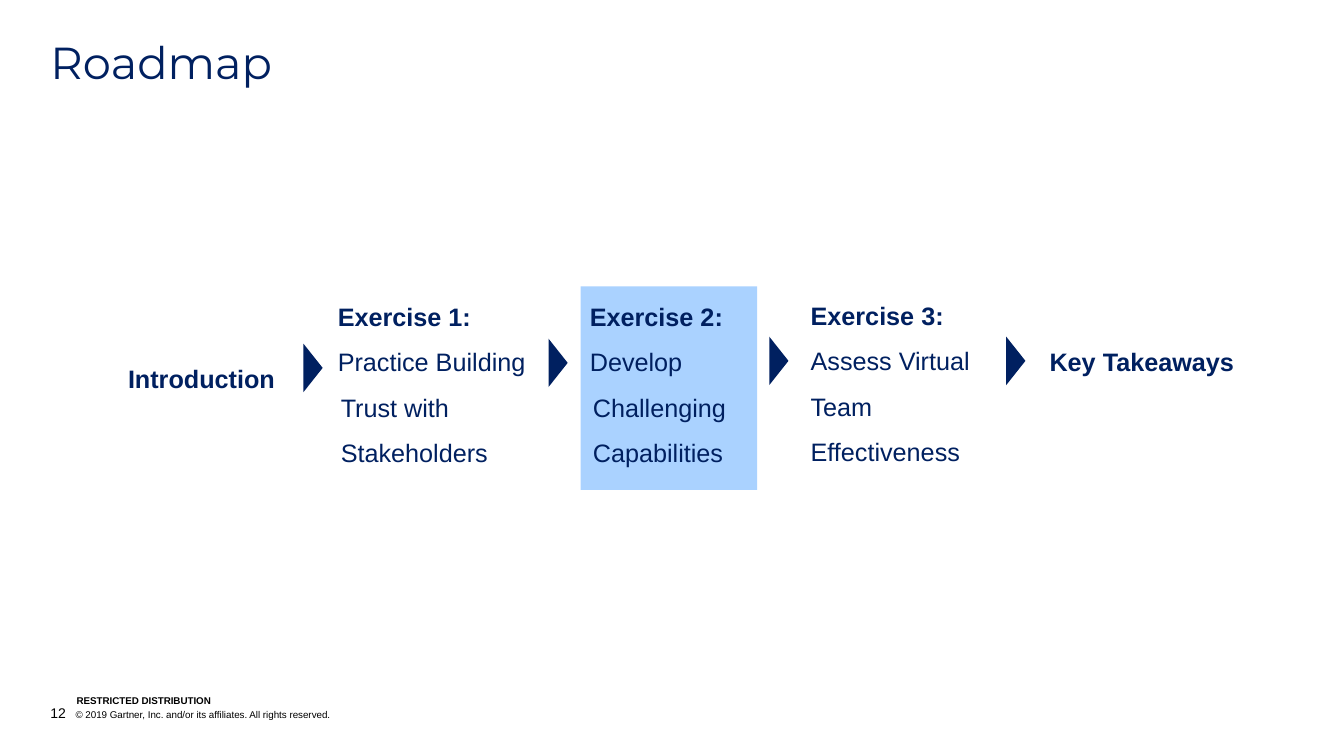
from lxml.etree import SubElement
from pptx import Presentation
from pptx.dml.color import RGBColor
from pptx.enum.shapes import MSO_SHAPE
from pptx.enum.text import MSO_ANCHOR, MSO_AUTO_SIZE, PP_ALIGN
from pptx.oxml.ns import qn
from pptx.util import Inches, Pt

COLORS = {"navy": "002060", "highlight": "AAD2FF", "black": "000000"}
TITLE = "Roadmap"
# label, (left, top, width, height)
ENDS = [
    ("Introduction", (1.27, 3.6, 1.6, 0.3)),
    ("Key Takeaways", (10.41, 3.44, 2, 0.3)),
]
# heading, description, (left, top, width, height), hanging indent
EXERCISES = [
    ("Exercise 1:", "Practice Building Trust with Stakeholders", (3.35, 2.84, 1.95, 1.19), 0.03),
    ("Exercise 2:", "Develop Challenging Capabilities", (5.85, 2.84, 1.72, 1.85), 0.03),
    ("Exercise 3:", "Assess Virtual Team Effectiveness", (8.04, 2.83, 1.84, 2.41), 0),
]
CURRENT_STEP = (5.76, 2.84, 1.75, 2.02)
ARROWS = [(3.01, 3.41), (5.44, 3.36), (7.63, 3.34), (9.98, 3.34)]
ARROW_WIDTH, ARROW_HEIGHT = 0.19, 0.48
RESTRICTION = "RESTRICTED DISTRIBUTION"
PAGE = "12"
COPYRIGHT = "© 2019 Gartner, Inc. and/or its affiliates. All rights reserved."
FOOTER_TAB = 0.25


def color(name):
    return RGBColor.from_string(COLORS[name])


def fill_plain(shape, name):
    shape.fill.solid()
    shape.fill.fore_color.rgb = color(name)
    shape.line.fill.background()
    shape.shadow.inherit = False


def clear_margins(frame):
    frame.margin_left = frame.margin_right = frame.margin_top = frame.margin_bottom = 0


def add_text(slide, box, anchor=MSO_ANCHOR.TOP):
    frame = slide.shapes.add_textbox(*map(Inches, box)).text_frame
    clear_margins(frame)
    frame.word_wrap = True
    frame.vertical_anchor = anchor
    return frame


def hang(paragraph, indent):
    properties = paragraph._p.get_or_add_pPr()
    properties.set("marL", str(Inches(indent)))
    properties.set("indent", str(-Inches(indent)))
    return properties


def style(paragraph, size, name="navy", bold=False, font="Arial"):
    paragraph.font.name = font
    paragraph.font.size = Pt(size)
    paragraph.font.bold = bold
    paragraph.font.color.rgb = color(name)


def add_title(slide):
    title = slide.shapes.title
    title.left, title.top, title.width, title.height = map(Inches, (0.5, 0.4, 12.33, 0.48))
    frame = title.text_frame
    clear_margins(frame)
    frame.auto_size = MSO_AUTO_SIZE.NONE
    frame.vertical_anchor = MSO_ANCHOR.TOP
    frame.text = TITLE
    paragraph = frame.paragraphs[0]
    paragraph.alignment = PP_ALIGN.LEFT
    paragraph.line_spacing = 0.9
    style(paragraph, 32, font="Montserrat")


def add_steps(slide):
    current = slide.shapes.add_shape(MSO_SHAPE.RECTANGLE, *map(Inches, CURRENT_STEP))
    fill_plain(current, "highlight")

    for label, box in ENDS:
        paragraph = add_text(slide, box).paragraphs[0]
        paragraph.text = label
        style(paragraph, 18, bold=True)

    for heading, description, box, indent in EXERCISES:
        frame = add_text(slide, box)
        frame.text = f"{heading}\n{description}"
        for paragraph, bold in zip(frame.paragraphs, (True, False)):
            hang(paragraph, indent)
            paragraph.line_spacing = 1.5
            style(paragraph, 18, bold=bold)


def add_arrows(slide):
    for left, top in ARROWS:
        outline = slide.shapes.build_freeform(Inches(left), Inches(top))
        outline.add_line_segments([
            (Inches(left + ARROW_WIDTH), Inches(top + ARROW_HEIGHT / 2)),
            (Inches(left), Inches(top + ARROW_HEIGHT)),
        ])
        fill_plain(outline.convert_to_shape(), "navy")


def add_footer(slide):
    restriction = add_text(slide, (0.76, 6.89, 2.53, 0.12), MSO_ANCHOR.BOTTOM).paragraphs[0]
    restriction.text = RESTRICTION
    style(restriction, 7, "black", bold=True)

    notice = add_text(slide, (0.5, 6.99, 7.99, 0.17), MSO_ANCHOR.BOTTOM).paragraphs[0]
    tabs = SubElement(hang(notice, FOOTER_TAB), qn("a:tabLst"))
    SubElement(tabs, qn("a:tab"), pos=str(Inches(FOOTER_TAB)), algn="l")
    style(notice, 7, "black")
    page = notice.add_run()
    page.text = PAGE
    page.font.size = Pt(10)
    notice.add_run().text = f"\t{COPYRIGHT}"


def main():
    deck = Presentation()
    deck.slide_width, deck.slide_height = Inches(13.33), Inches(7.5)
    slide = deck.slides.add_slide(deck.slide_layouts[5])
    add_title(slide)
    add_steps(slide)
    add_arrows(slide)
    add_footer(slide)
    deck.save("out.pptx")


if __name__ == "__main__":
    main()
